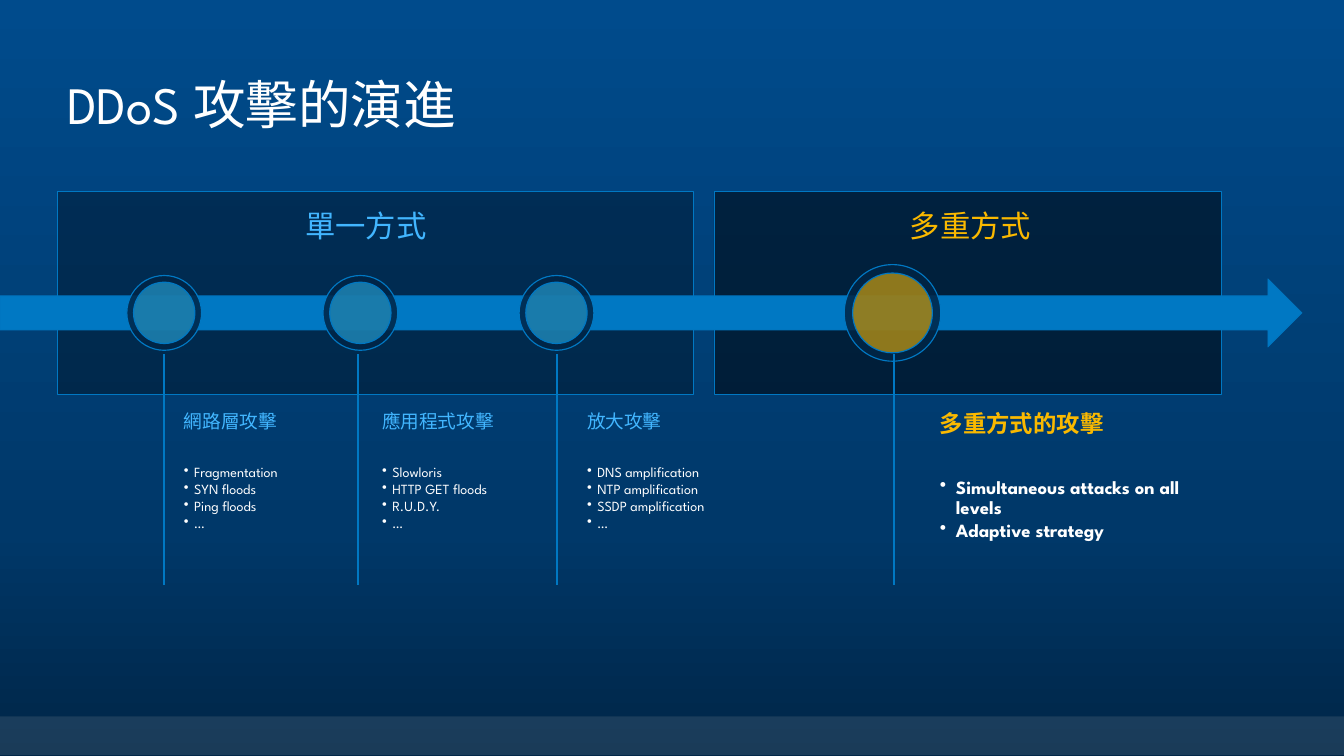
from copy import deepcopy
from lxml.etree import SubElement
from pptx import Presentation
from pptx.dml.color import RGBColor
from pptx.enum.shapes import MSO_CONNECTOR as Connector, MSO_SHAPE as Shape
from pptx.enum.text import MSO_ANCHOR as Anchor, PP_ALIGN as Align
from pptx.oxml.ns import qn
from pptx.util import Inches, Pt

FONT = "League Spartan"
COLORS = {
    "top": "004B8C", "middle": "003869", "navy": "002546", "line": "0078C3",
    "arrow_line": "0075BF", "sky": "42B6FF", "cyan": "2DB4EB",
    "amber": "FAB900", "white": "FFFFFF", "black": "000000",
}
AXIS_Y = 3.725
PANELS = [
    (0.68, 7.57, 33, "單一方式", 3.01, "sky"),
    (8.5, 6.04, 50, "多重方式", 10.21, "amber"),
]
STAGES = [
    dict(center=1.955, stem=1.95, disc=(0.89, 0.73), fill="cyan",
         box=(2.07, 4.91, 1.62, 1.41), inset=0.12, head="網路層攻擊",
         points=["Fragmentation", "SYN floods", "Ping floods", "…"]),
    dict(center=4.29, stem=4.26, disc=(0.89, 0.73), fill="cyan",
         box=(4.35, 4.91, 1.99, 1.2), inset=0.2, head="應用程式攻擊",
         points=["Slowloris", "HTTP GET floods", "R.U.D.Y.", "…"]),
    dict(center=6.625, stem=6.63, disc=(0.89, 0.73), fill="cyan",
         box=(6.72, 4.91, 1.99, 1.44), inset=0.27, head="放大攻擊",
         points=["DNS amplification", "NTP amplification", "SSDP amplification", "…"]),
    dict(center=10.625, stem=10.64, disc=(1.15, 0.95), fill="amber",
         box=(10.83, 4.91, 3.56, 1.68), inset=0.36, head="多重方式的攻擊",
         points=["Simultaneous attacks on all levels", "Adaptive strategy"],
         color="amber", sizes=(20, 16), indent=0.19, bold=True),
]


def rgb(name):
    """Return the named colour."""
    return RGBColor.from_string(COLORS[name])


def add_filled(shapes, kind, box, fill, alpha=100, line=None, width=0.75):
    """Add a flat shape with an optional transparency and outline."""
    shape = shapes.add_shape(kind, *map(Inches, box))
    shape.shadow.inherit = False
    shape.fill.solid()
    shape.fill.fore_color.rgb = rgb(fill)
    if alpha < 100:
        color = shape._element.spPr.find(qn("a:solidFill"))[0]
        SubElement(color, qn("a:alpha"), val=str(alpha * 1000))
    if line:
        shape.line.color.rgb = rgb(line)
        shape.line.width = Pt(width)
    else:
        shape.line.fill.background()
    return shape


def add_frame(slide, box, insets=(0.1, 0.05, 0.1, 0.05)):
    """Add a wrapping text box and return its text frame."""
    frame = slide.shapes.add_textbox(*map(Inches, box)).text_frame
    frame.word_wrap = True
    (frame.margin_left, frame.margin_top,
     frame.margin_right, frame.margin_bottom) = map(Inches, insets)
    return frame


def add_run(paragraph, text, size, color, bold=False):
    """Add one styled run."""
    run = paragraph.add_run()
    run.text = text
    run.font.name = FONT
    run.font.size = Pt(size)
    run.font.bold = bold
    run.font.color.rgb = rgb(color)


def add_bullet(paragraph, indent):
    """Give a paragraph a hanging bullet."""
    properties = paragraph._p.get_or_add_pPr()
    properties.set("marL", str(Inches(indent)))
    properties.set("indent", str(-Inches(indent)))
    SubElement(properties, qn("a:buChar"), char="•")


def draw_background(slide, box):
    """Paint the gradient and the pale footer strip."""
    left, top, width, height = box
    fill = slide.background.fill
    fill.gradient()
    fill.gradient_angle = 270
    stop_list = slide.background._cSld.find(".//" + qn("a:gsLst"))
    stop_list.insert(1, deepcopy(stop_list[0]))
    stops = zip(fill.gradient_stops, ("top", "middle", "navy"), (0, 0.7, 1))
    for stop, name, position in stops:
        stop.color.rgb = rgb(name)
        stop.position = position
    strip = (left, top + height - 0.47, width, 0.46)
    add_filled(slide.shapes, Shape.RECTANGLE, strip, "white", 10)


def draw_title(slide, box):
    """Write the title along the bottom of its box."""
    frame = add_frame(slide, box, (0, 0, 0, 0))
    frame.vertical_anchor = Anchor.BOTTOM
    title = frame.paragraphs[0]
    title.line_spacing = 0.95
    title.space_after = Pt(2)
    add_run(title, "DDoS 攻擊的演進", 45, "white")


def draw_panel(slide, box, alpha, label, label_left, color):
    """Draw an era panel with its label."""
    add_filled(slide.shapes, Shape.RECTANGLE, box, "black", alpha, "line")
    frame = add_frame(slide, (label_left, box[1] + 0.14, 2.69, 0.54))
    frame.paragraphs[0].alignment = Align.CENTER
    add_run(frame.paragraphs[0], label, 26, color)


def draw_milestone(slide, center, stem, diameters, fill):
    """Draw a ringed disc on the arrow and the stem below it."""
    group = slide.shapes.add_group_shape()
    for diameter, color, alpha in zip(diameters, ("navy", fill), (86, 57)):
        box = (center - diameter / 2, AXIS_Y - diameter / 2, diameter, diameter)
        add_filled(group.shapes, Shape.OVAL, box, color, alpha, "line", 1)
    ends = map(Inches, (stem, 6.96, stem, 4.21))
    line = slide.shapes.add_connector(Connector.STRAIGHT, *ends)
    line.line.color.rgb = rgb("line")
    line.line.width = Pt(2)
    SubElement(line._element.spPr, qn("a:effectLst"))


def draw_details(slide, box, inset, head, points, color="sky",
                 sizes=(16, 12), indent=0.12, bold=False):
    """Write a stage heading and its bullet points."""
    head_size, point_size = sizes
    frame = add_frame(slide, box, (inset, 0, 0, 0))
    heading = frame.paragraphs[0]
    heading.line_spacing = 0.9
    heading.space_after = Pt(head_size * 1.75)
    add_run(heading, head, head_size, color, bold)
    for point in points:
        paragraph = frame.add_paragraph()
        paragraph.line_spacing = 0.9
        paragraph.space_after = Pt(point_size * 0.15)
        add_bullet(paragraph, indent)
        add_run(paragraph, point, point_size, "white", bold)


def draw_stage(slide, center, stem, disc, fill, **details):
    """Draw one stage of the timeline."""
    draw_milestone(slide, center, stem, disc, fill)
    draw_details(slide, **details)


def main():
    """Build the timeline slide and save it."""
    deck = Presentation()
    deck.slide_width, deck.slide_height = Inches(16), Inches(9)
    slide = deck.slides.add_slide(deck.slide_layouts[6])
    draw_background(slide, (0, 0, 16, 9))
    draw_title(slide, (0.8, 0.32, 14.4, 1.3))
    for left, width, *panel in PANELS:
        draw_panel(slide, (left, 2.28, width, 2.42), *panel)
    add_filled(slide.shapes, Shape.RIGHT_ARROW, (0, AXIS_Y - 0.405, 15.5, 0.81),
               "line", line="arrow_line")
    for stage in STAGES:
        draw_stage(slide, **stage)
    deck.save("out.pptx")


if __name__ == "__main__":
    main()
